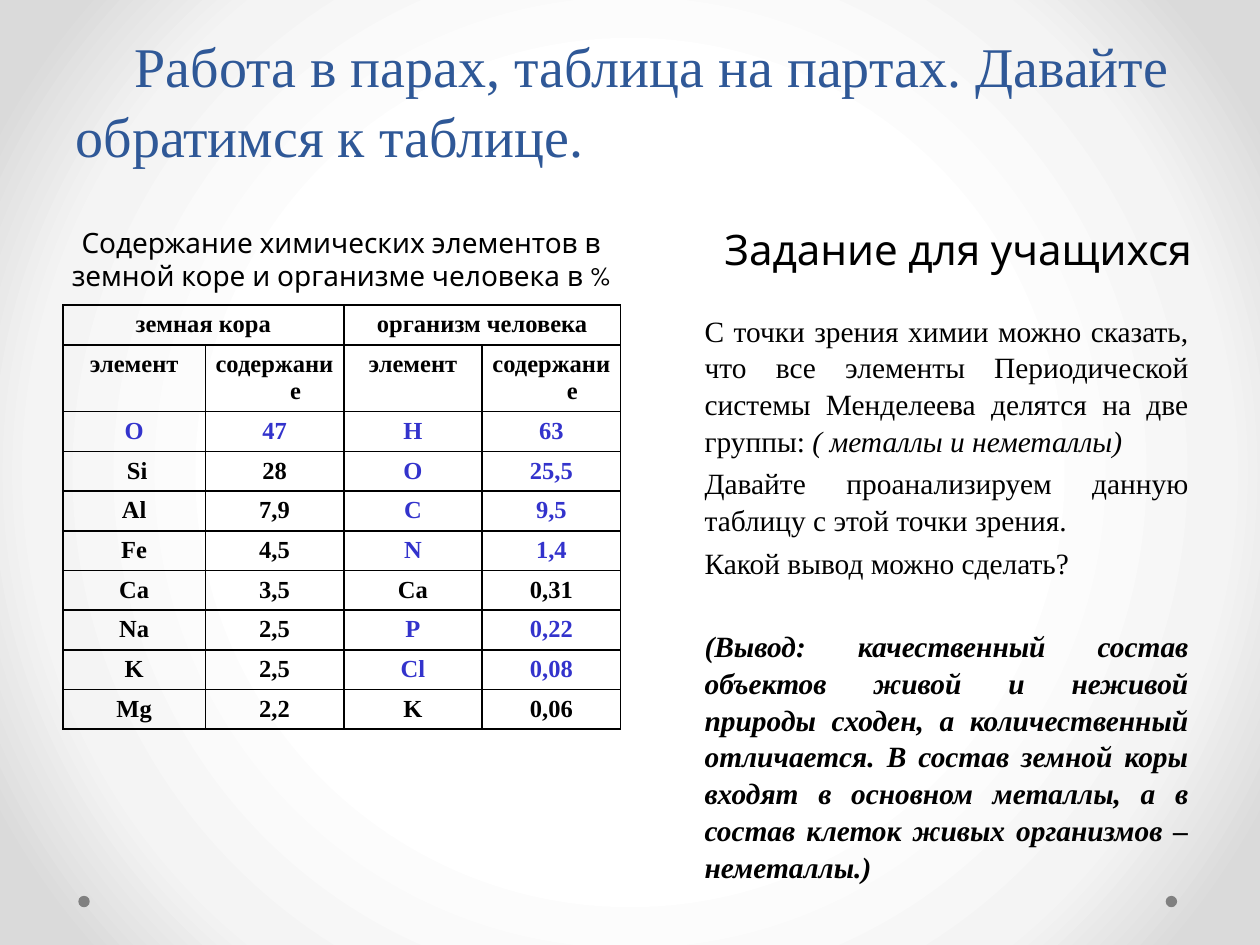
from dataclasses import dataclass

from pptx import Presentation
from pptx.dml.color import RGBColor
from pptx.enum.shapes import MSO_SHAPE
from pptx.enum.text import MSO_ANCHOR, MSO_AUTO_SIZE, PP_ALIGN
from pptx.oxml import parse_xml
from pptx.oxml.ns import nsdecls, qn
from pptx.util import Cm, Pt


@dataclass
class Theme:
    """Colours, fonts and type sizes."""

    blue: str = "2F5897"
    mark: str = "3333CC"
    ink: str = "000000"
    dot: str = "808080"
    glow: tuple = ((50, "FFFFFF"), (76, "F4F4F4"), (92, "DADADA"))
    serif: str = "Times New Roman"
    sans: str = "League Spartan"
    title: float = 32
    head: float = 24
    note: float = 16
    body: float = 16.8
    cell: float = 14


HEADS = ("земная кора", "организм человека")
ROWS = (
    ("элемент", "содержание ", "элемент", "содержание "),
    ("O", "47", "H", "63"),
    (" Si", "28", "O", "25,5"),
    ("Al", "7,9", "C", "9,5"),
    ("Fe", "4,5", "N", "1,4"),
    ("Ca", "3,5", "Ca", "0,31"),
    ("Na", "2,5", "P", "0,22"),
    ("K", "2,5", "Cl", "0,08"),
    ("Mg", "2,2", "K", "0,06"),
)
GASES = {"O", "H", "C", "N", "P", "Cl"}
TASK = (
    ("С точки зрения химии можно сказать, что все элементы Периодической "
     "системы Менделеева делятся на две группы: ", "( металлы и неметаллы)"),
    ("Давайте проанализируем данную таблицу с этой точки зрения.",),
    ("Какой вывод можно сделать?",),
    ("(Вывод: качественный состав объектов живой и неживой природы сходен, "
     "а количественный отличается. В состав земной коры входят в основном "
     "металлы, а в состав клеток живых организмов – неметаллы.)",),
)


class Page:
    """One slide and its style."""

    def __init__(self, deck, theme):
        """Add a comparison slide to the deck."""
        self.theme = theme
        self.slide = deck.slides.add_slide(deck.slide_layouts[4])
        self.slots = {s.placeholder_format.idx: s for s in self.slide.placeholders}

    def style(self, run, font, size, color, bold=False, italic=False):
        """Format one run."""
        face = run.font
        face.name, face.size = font, Pt(size)
        face.bold, face.italic = bold, italic
        face.color.rgb = RGBColor.from_string(color)

    def indent(self, par, left, first):
        """Set the indents of a paragraph and drop its bullet."""
        props = par._p.get_or_add_pPr()
        props.set("marL", str(Cm(left)))
        props.set("indent", str(Cm(first)))
        for old in props.findall(qn("a:buNone")):
            props.remove(old)
        props.append(parse_xml(f"<a:buNone {nsdecls('a')}/>"))

    def back(self):
        """Paint the round gradient behind the slide."""
        self.slide.background.fill.solid()
        props = self.slide.element.find(".//" + qn("p:bgPr"))
        stops = "".join(
            f'<a:gs pos="{pos * 1000}"><a:srgbClr val="{color}"/></a:gs>'
            for pos, color in self.theme.glow)
        props.replace(props[0], parse_xml(
            f'<a:gradFill {nsdecls("a")} rotWithShape="1"><a:gsLst>{stops}</a:gsLst>'
            '<a:path path="circle"><a:fillToRect l="50000" t="50000" r="50000" '
            'b="50000"/></a:path></a:gradFill>'))

    def dot(self, left, top, size):
        """Draw a small plain disc."""
        disc = self.slide.shapes.add_shape(
            MSO_SHAPE.OVAL, Cm(left), Cm(top), Cm(size), Cm(size))
        disc.shadow.inherit = False
        disc.fill.solid()
        disc.fill.fore_color.rgb = RGBColor.from_string(self.theme.dot)
        disc.line.fill.background()

    def place(self, idx, box, anchor):
        """Move a placeholder and return its text frame."""
        slot = self.slots[idx]
        slot.left, slot.top, slot.width, slot.height = map(Cm, box)
        frame = slot.text_frame
        frame.word_wrap = True
        frame.auto_size = MSO_AUTO_SIZE.NONE
        frame.vertical_anchor = anchor
        return frame

    def title(self, text, box):
        """Fill the title."""
        frame = self.place(0, box, MSO_ANCHOR.BOTTOM)
        frame.text = text
        par = frame.paragraphs[0]
        par.alignment, par.line_spacing = PP_ALIGN.LEFT, 1.04
        self.indent(par, 0, 1.19)
        self.style(par.runs[0], self.theme.serif, self.theme.title, self.theme.blue)

    def label(self, idx, text, box, size):
        """Fill a column heading."""
        frame = self.place(idx, box, MSO_ANCHOR.BOTTOM)
        frame.text = text
        par = frame.paragraphs[0]
        par.alignment = PP_ALIGN.CENTER
        self.indent(par, 0, 0)
        self.style(par.runs[0], self.theme.sans, size, self.theme.ink)

    def body(self, idx, items, box):
        """Fill the list, with its last item set apart in bold italic."""
        frame = self.place(idx, box, MSO_ANCHOR.TOP)
        for num, parts in enumerate(items):
            par = frame.add_paragraph() if num else frame.paragraphs[0]
            last = num == len(items) - 1
            par.alignment, par.line_spacing = PP_ALIGN.JUSTIFY, 1.04
            par.space_before = Pt(26.7 if last else 3.4)
            self.indent(par, 0.97, 0)
            for pos, text in enumerate(parts):
                run = par.add_run()
                run.text = text
                self.style(run, self.theme.serif, self.theme.body,
                           self.theme.ink, last, last or pos > 0)

    def cell(self, cell, text, color):
        """Fill and rule one cell."""
        cell.text = text
        cell.margin_left = cell.margin_right = Cm(0.2)
        cell.margin_top = cell.margin_bottom = Cm(0.12)
        par = cell.text_frame.paragraphs[0]
        par.alignment = PP_ALIGN.CENTER
        self.indent(par, 0.97, -0.97)
        for run in par.runs:
            self.style(run, self.theme.serif, self.theme.cell, color, True)
        props = cell._tc.get_or_add_tcPr()
        for side in "LRTB":
            props.append(parse_xml(
                f'<a:ln{side} {nsdecls("a")} w="{Pt(1)}"><a:solidFill><a:srgbClr '
                f'val="{self.theme.ink}"/></a:solidFill></a:ln{side}>'))
        cell.fill.background()

    def table(self, heads, rows, box, cols, highs):
        """Add the table with paired headings."""
        grid = self.slide.shapes.add_table(
            len(rows) + 1, len(cols), *map(Cm, box)).table
        grid.first_row = grid.horz_banding = False
        for col, wide in zip(grid.columns, cols):
            col.width = Cm(wide)
        for row, high in zip(grid.rows, highs):
            row.height = Cm(high)
        top = [text for head in heads for text in (head, "")]
        for y, row in enumerate([top, *rows]):
            for x, text in enumerate(row):
                name = row[x - x % 2].strip()
                color = self.theme.mark if name in GASES else self.theme.ink
                self.cell(grid.cell(y, x), text, color)
        for x in range(0, len(cols), 2):
            grid.cell(0, x).merge(grid.cell(0, x + 1))

    def drop(self, idx):
        """Remove an unused placeholder."""
        node = self.slots[idx].element
        node.getparent().remove(node)


def main():
    """Build and save the slide."""
    deck = Presentation()
    deck.slide_width, deck.slide_height = Cm(25.4), Cm(19.05)
    theme = Theme()
    page = Page(deck, theme)
    page.back()
    for left in (1.58, 23.5):
        page.dot(left, 18.06, 0.23)
    page.title("Работа в парах, таблица на партах. Давайте обратимся к таблице.",
               (1.27, 0, 22.86, 3.53))
    page.label(1, "Содержание химических элементов в земной коре и организме "
               "человека в %", (0.89, 4.32, 11.99, 1.7), theme.note)
    page.label(3, "Задание для учащихся", (14.12, 3.94, 10.39, 1.7), theme.head)
    page.table(HEADS, ROWS, (1.27, 6.15, 11.23, 9.07),
               (2.87, 2.79, 2.79, 2.79), (0.8, 1.35) + (0.8,) * 8)
    page.body(4, TASK, (12.98, 6.15, 11.23, 10.87))
    page.drop(2)
    deck.save("out.pptx")


if __name__ == "__main__":
    main()
